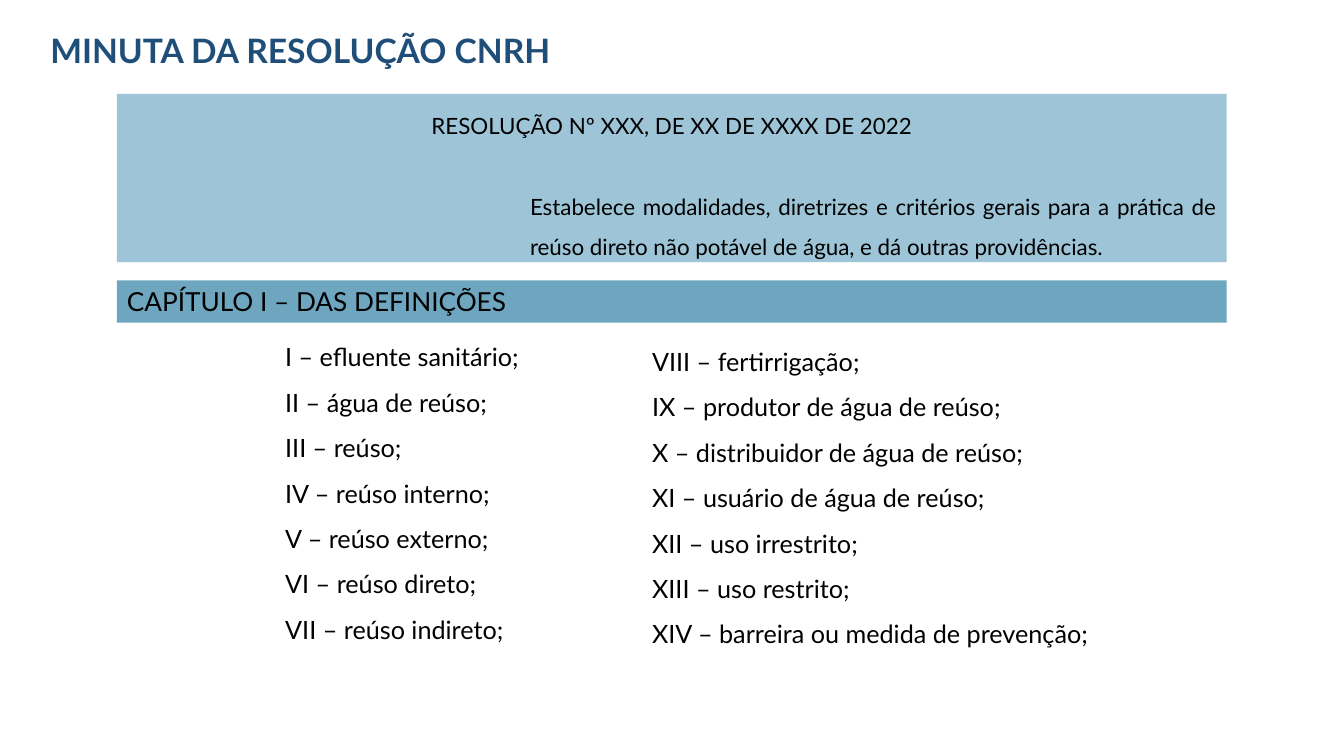
from lxml.etree import SubElement
from pptx import Presentation
from pptx.dml.color import RGBColor
from pptx.enum.shapes import MSO_SHAPE as Preset
from pptx.enum.text import MSO_ANCHOR as Anchor, MSO_AUTO_SIZE as AutoSize, PP_ALIGN as Align
from pptx.oxml.ns import qn
from pptx.util import Pt

TITLE_BLUE = RGBColor(0x1F, 0x4E, 0x79)
PALE_BLUE = RGBColor(0x9D, 0xC5, 0xD7)
MID_BLUE = RGBColor(0x6E, 0xA6, 0xC0)
BLACK = RGBColor(0, 0, 0)

BAND_LEFT, BAND_WIDTH = 83.5, 792.7

DEFINITIONS_LEFT = [
    "I – efluente sanitário;",
    "II – água de reúso;",
    "III – reúso;",
    "IV – reúso interno;",
    "V – reúso externo;",
    "VI – reúso direto;",
    "VII – reúso indireto;",
]
DEFINITIONS_RIGHT = [
    "VIII – fertirrigação;",
    "IX – produtor de água de reúso;",
    "X – distribuidor de água de reúso;",
    "XI – usuário de água de reúso;",
    "XII – uso irrestrito;",
    "XIII – uso restrito;",
    "XIV – barreira ou medida de prevenção;",
]


def place(holder, left, top, width, height):
    holder.left, holder.top = Pt(left), Pt(top)
    holder.width, holder.height = Pt(width), Pt(height)


def style(paragraph, size, align=Align.LEFT, spacing=1.0, before=0, color=BLACK, bold=False):
    paragraph.alignment = align
    paragraph.line_spacing = spacing
    paragraph.space_before = Pt(before)
    font = paragraph.font
    font.name, font.size, font.bold = "Lato", Pt(size), bold
    font.color.rgb = color


def set_indent(paragraph, margin):
    properties = paragraph._p.get_or_add_pPr()
    properties.set("marL", str(Pt(margin)))
    properties.set("indent", "0")
    return properties


def fill_title(title, text):
    place(title, 28.8, 18, 624, 36)
    frame = title.text_frame
    frame.text = text
    frame.auto_size = AutoSize.NONE
    frame.vertical_anchor = Anchor.MIDDLE
    style(frame.paragraphs[0], 24, color=TITLE_BLUE, bold=True)


def fill_definitions(body, definitions, left, top, width, height):
    place(body, left, top, width, height)
    frame = body.text_frame
    frame.text = "\n".join(definitions)
    frame.auto_size = AutoSize.NONE
    for paragraph in frame.paragraphs:
        SubElement(set_indent(paragraph, 0), qn("a:buNone"))
        style(paragraph, 18, Align.JUSTIFY, 1.5)


def add_band(slide, top, height, color, text, anchor):
    band = slide.shapes.add_shape(
        Preset.RECTANGLE, Pt(BAND_LEFT), Pt(top), Pt(BAND_WIDTH), Pt(height))
    band.shadow.inherit = False
    band.fill.solid()
    band.fill.fore_color.rgb = color
    band.line.fill.background()
    frame = band.text_frame
    frame.word_wrap = True
    frame.vertical_anchor = anchor
    frame.text = text
    return frame


def add_resolution(slide):
    frame = add_band(slide, 67, 120.2, PALE_BLUE,
                     "RESOLUÇÃO Nº XXX, DE XX DE XXXX DE 2022", Anchor.TOP)
    style(frame.paragraphs[0], 16, Align.CENTER, 1.5)
    summary = frame.add_paragraph()
    summary.text = ("Estabelece modalidades, diretrizes e critérios gerais para a prática "
                    "de reúso direto não potável de água, e dá outras providências.")
    set_indent(summary, 288)
    style(summary, 16, Align.JUSTIFY, 1.5, before=29)


def add_chapter(slide):
    frame = add_band(slide, 200.2, 30.2, MID_BLUE, "CAPÍTULO I – DAS DEFINIÇÕES", Anchor.MIDDLE)
    style(frame.paragraphs[0], 18.7)


def main():
    deck = Presentation()
    deck.slide_width, deck.slide_height = Pt(960), Pt(540)
    slide = deck.slides.add_slide(deck.slide_layouts.get_by_name("Two Content"))
    for footer in [p for p in slide.placeholders if p.placeholder_format.idx >= 10]:
        footer._element.getparent().remove(footer._element)
    title, left_list, right_list = slide.placeholders
    fill_title(title, "MINUTA DA RESOLUÇÃO CNRH")
    fill_definitions(left_list, DEFINITIONS_LEFT, 196.5, 229.7, 283.7, 232.6)
    fill_definitions(right_list, DEFINITIONS_RIGHT, 458.6, 233, 360, 257.8)
    add_resolution(slide)
    add_chapter(slide)
    deck.save("out.pptx")


if __name__ == "__main__":
    main()
